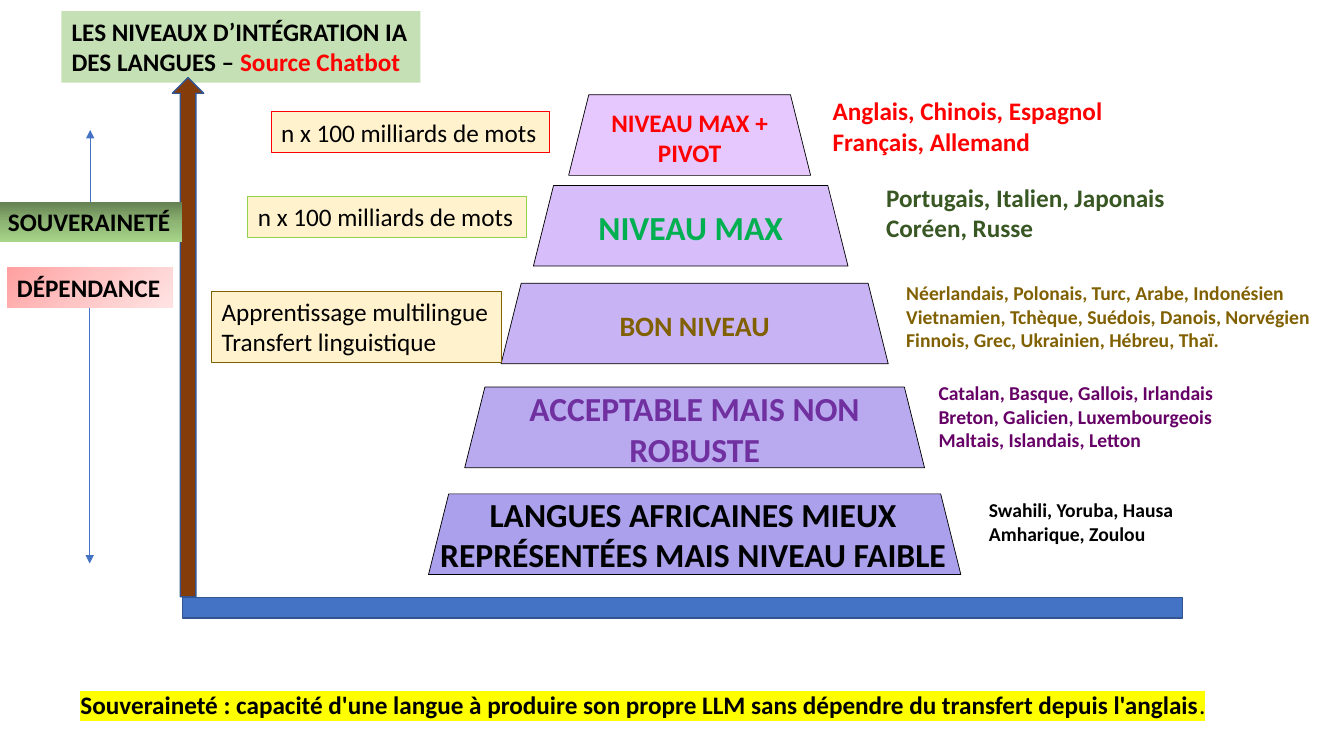
from dataclasses import dataclass
from lxml import etree
from pptx import Presentation
from pptx.dml.color import RGBColor
from pptx.enum import shapes, text
from pptx.oxml.ns import qn
from pptx.util import Inches, Pt


@dataclass(frozen=True)
class Theme:
    font: str = "Calibri"
    small: int = 14
    body: int = 18
    level: int = 20
    large: int = 24
    black: str = "000000"
    red: str = "FF0000"
    olive: str = "806000"
    blue: str = "4472C4"
    outline: str = "325491"
    brown: str = "843C0B"
    cream: str = "FFF2CC"
    title: str = "C5E0B4"
    yellow: str = "FFFF00"


T = Theme()

# Content
TITLE_TOP = "LES NIVEAUX D’INTÉGRATION IA"
TITLE_BOTTOM = [("DES LANGUES – ", T.black), ("Source Chatbot", T.red)]
# Pyramid levels: text, left, top, fill, text colour, size
LEVELS = [
    ("NIVEAU MAX + PIVOT", 5.64, 0.94, "E6C8FF", T.red, T.body),
    ("NIVEAU MAX", 5.29, 1.84, "D7BEFA", "00B050", T.large),
    ("BON NIVEAU", 4.97, 2.81, "C8B4F5", T.olive, T.level),
    ("ACCEPTABLE MAIS NON ROBUSTE", 4.61, 3.84, "B9AAF0", "7030A0", T.large),
    ("", 4.25, 4.9, "AAA0EB", T.black, T.large),
]
LOWEST = ["LANGUES AFRICAINES MIEUX", "REPRÉSENTÉES MAIS NIVEAU FAIBLE"]
# Languages: lines, left, top, width, colour, size
LANGUAGES = [
    (["Anglais, Chinois, Espagnol", "Français, Allemand"], 8.16, 0.9, 3.38, T.red, T.body),
    (["Portugais, Italien, Japonais", "Coréen, Russe"], 8.69, 1.76, 2.99, "385723", T.body),
    (["Néerlandais, Polonais, Turc, Arabe, Indonésien",
      "Vietnamien, Tchèque, Suédois, Danois, Norvégien",
      "Finnois, Grec, Ukrainien, Hébreu, Thaï."], 8.89, 2.74, 4.24, T.olive, T.small),
    (["Catalan, Basque, Gallois, Irlandais", "Breton, Galicien, Luxembourgeois",
      "Maltais, Islandais, Letton"], 9.21, 3.73, 2.95, "660066", T.small),
    (["Swahili, Yoruba, Hausa", "Amharique, Zoulou"], 9.71, 4.89, 2.04, T.black, T.small),
]
# Training data: lines, left, top, width, outline
CORPORA = [
    (["n x 100 milliards de mots"], 2.69, 1.11, 2.76, T.red),
    (["n x 100 milliards de mots"], 2.46, 1.95, 2.76, "92D050"),
    (["Apprentissage multilingue", "Transfert linguistique"], 2.1, 2.89, 2.87, T.olive),
]
# Poles: text, left, top, width, gradient, angle, connection site, arrow tip
POLES = [
    ("SOUVERAINETÉ", -0.02, 2, 1.83, ["637F51", "8DB473", "A8D689"], 90, 0, 1.29),
    ("DÉPENDANCE", 0.07, 2.65, 1.64, ["FFA0A0", "FFC5C5", "FFE3E3"], 45, 2, 5.59),
]
DEFINITION = ("Souveraineté : capacité d'une langue à produire son propre LLM "
              "sans dépendre du transfert depuis l'anglais")

prs = Presentation()
prs.slide_width, prs.slide_height = Inches(13.33), Inches(7.5)
s = prs.slides.add_slide(prs.slide_layouts[5])


def rgb(colour):
    return RGBColor.from_string(colour)


def add_run(p, words, size=T.body, colour=T.black, bold=True, highlight=None):
    r = p.add_run()
    r.text = words
    f = r.font
    f.size, f.bold = Pt(size), bold
    f.color.rgb = rgb(colour)
    if highlight:
        mark = etree.SubElement(r._r.get_or_add_rPr(), qn("a:highlight"))
        etree.SubElement(mark, qn("a:srgbClr"), val=highlight)
    f.name = T.font  # follows the highlight, as the schema requires


def write(sp, lines, align=text.PP_ALIGN.LEFT, anchor=text.MSO_ANCHOR.TOP,
          wrap=False, fit=True, **fmt):
    """Write one paragraph per line; all runs share the given format."""
    tf = sp.text_frame
    tf.word_wrap, tf.vertical_anchor = wrap, anchor
    tf.auto_size = text.MSO_AUTO_SIZE.SHAPE_TO_FIT_TEXT if fit else text.MSO_AUTO_SIZE.NONE
    for i, line in enumerate(lines):
        p = tf.add_paragraph() if i else tf.paragraphs[0]
        p.alignment = align
        add_run(p, line, **fmt)
    return tf


def height(lines, size=T.body):
    return 0.1 + len(lines) * size * 1.22 / 72


def add_box(left, top, width, tall):
    return s.shapes.add_textbox(*map(Inches, (left, top, width, tall)))


def add_shape(kind, left, top, width, tall, fill=None, line=None, weight=1):
    sp = s.shapes.add_shape(kind, *map(Inches, (left, top, width, tall)))
    sp.shadow.inherit = False
    if fill:
        sp.fill.solid()
        sp.fill.fore_color.rgb = rgb(fill)
    if line:
        sp.line.color.rgb = rgb(line)
        sp.line.width = Pt(weight)
    else:
        sp.line.fill.background()
    return sp


def set_gradient(sp, colours, angle):
    sp.fill.gradient()
    grad = sp._element.spPr.find(qn("a:gradFill"))
    for child in list(grad):
        grad.remove(child)
    stops = etree.SubElement(grad, qn("a:gsLst"))
    for i, colour in enumerate(colours):
        stop = etree.SubElement(stops, qn("a:gs"), pos=str(i * 50000))
        etree.SubElement(stop, qn("a:srgbClr"), val=colour)
    etree.SubElement(grad, qn("a:lin"), ang=str(angle * 60000), scaled="0")


KIND = shapes.MSO_SHAPE

# Title
title = s.shapes.title
title.left, title.top, title.width, title.height = map(Inches, (0.61, 0.11, 3.56, 0.71))
title.fill.solid()
title.fill.fore_color.rgb = rgb(T.title)
p = write(title, [TITLE_TOP], fit=False).paragraphs[0]
p.line_spacing = 1.0
p.add_line_break()
for words, colour in TITLE_BOTTOM:
    add_run(p, words, colour=colour)

# Pyramid
for i, (name, left, top, fill, colour, size) in enumerate(LEVELS):
    sp = add_shape(KIND.TRAPEZOID, left, top, 2.4 + 0.72 * i, 0.8, fill, T.black, 0.5)
    if name:
        write(sp, [name], align=text.PP_ALIGN.CENTER, anchor=text.MSO_ANCHOR.MIDDLE,
              wrap=True, fit=False, size=size, colour=colour)
write(add_box(4.24, 4.85, 5.27, height(LOWEST, T.large)), LOWEST,
      align=text.PP_ALIGN.CENTER, size=T.large)

# Languages of each level
for lines, left, top, width, colour, size in LANGUAGES:
    write(add_box(left, top, width, height(lines, size)), lines, size=size, colour=colour)

# Axes
add_shape(KIND.RECTANGLE, 1.81, 5.93, 9.92, 0.2, T.blue, T.outline)
axis = add_shape(KIND.DOWN_ARROW, 1.71, 0.77, 0.31, 5.15, T.brown, T.outline)
axis.rotation = 180

# Training data
for lines, left, top, width, line in CORPORA:
    sp = add_shape(KIND.RECTANGLE, left, top, width, height(lines), T.cream, line, 0.75)
    write(sp, lines, bold=False)

# Poles and their arrows
for name, left, top, width, colours, angle, site, tip in POLES:
    sp = add_shape(KIND.RECTANGLE, left, top, width, height([name]))
    set_gradient(sp, colours, angle)
    write(sp, [name])
    x = Inches(left + width / 2)
    arrow = s.shapes.add_connector(shapes.MSO_CONNECTOR.STRAIGHT, x, Inches(top), x, Inches(tip))
    arrow.begin_connect(sp, site)
    arrow.line.color.rgb = rgb(T.blue)
    arrow.line.width = Pt(0.5)
    etree.SubElement(arrow.line._get_or_add_ln(), qn("a:tailEnd"), type="triangle")
    etree.SubElement(arrow._element.spPr, qn("a:effectLst"))

# Definition
tf = write(add_box(0.7, 6.79, 12.13, 0.4), [DEFINITION], wrap=True, highlight=T.yellow)
add_run(tf.paragraphs[0], ".", bold=False, highlight=T.yellow)

prs.save("out.pptx")
